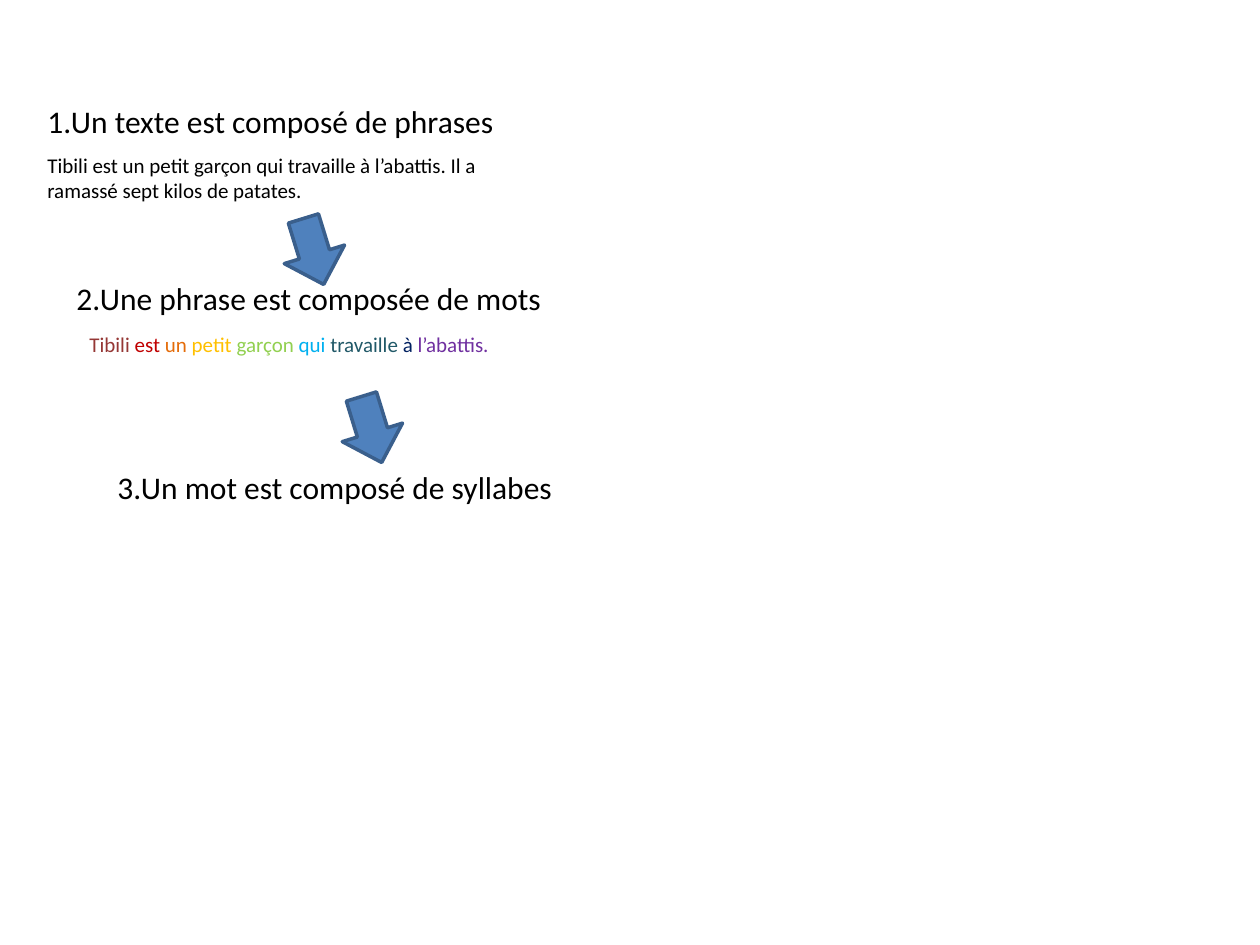
from dataclasses import dataclass

from pptx import Presentation
from pptx.dml.color import RGBColor
from pptx.enum.shapes import MSO_SHAPE as Preset
from pptx.util import Pt

EMU_PER_PX = 914400 / 126
FONT = "Calibri"
COLOURS = {
    "black": "000000",
    "brown": "953735",
    "red": "C00000",
    "orange": "E46C0A",
    "yellow": "FFC000",
    "green": "92D050",
    "sky": "00B0F0",
    "teal": "215968",
    "navy": "002060",
    "purple": "7030A0",
    "arrow": "4F81BD",
    "outline": "3A5F8C",
}


@dataclass(frozen=True)
class Frame:
    left: int
    top: int
    width: int
    height: int

    def emu(self) -> list[int]:
        return [px(n) for n in (self.left, self.top, self.width, self.height)]


@dataclass(frozen=True)
class Span:
    text: str
    colour: str = "black"


@dataclass(frozen=True)
class Label:
    frame: Frame
    spans: tuple[Span, ...]
    size: int


def px(length: int) -> int:
    return round(length * EMU_PER_PX)


def colour(name: str) -> RGBColor:
    return RGBColor.from_string(COLOURS[name])


def add_span(para, text: str, *, size: int, tint: str) -> None:
    run = para.add_run()
    run.text = text
    run.font.name = FONT
    run.font.size = Pt(size)
    run.font.color.rgb = colour(tint)


def draw_label(page, label: Label) -> None:
    box = page.shapes.add_textbox(*label.frame.emu())
    box.text_frame.word_wrap = True
    para = box.text_frame.paragraphs[0]
    for span in label.spans:
        add_span(para, span.text, size=label.size, tint=span.colour)


def draw_arrow(page, frame: Frame) -> None:
    arrow = page.shapes.add_shape(Preset.RIGHT_ARROW, *frame.emu())
    arrow.rotation = 72.9
    arrow.shadow.inherit = False
    arrow.fill.solid()
    arrow.fill.fore_color.rgb = colour("arrow")
    arrow.line.color.rgb = colour("outline")
    arrow.line.width = Pt(2)


COLOURED_WORDS = (
    Span("Tibili ", "brown"),
    Span("est ", "red"),
    Span("un ", "orange"),
    Span("petit ", "yellow"),
    Span("garçon ", "green"),
    Span("qui ", "sky"),
    Span("travaille ", "teal"),
    Span("à ", "navy"),
    Span("l’abattis.", "purple"),
)
EXAMPLE = Span(
    "Tibili est un petit garçon qui travaille à l’abattis. "
    "Il a ramassé sept kilos de patates."
)
LABELS = (
    Label(Frame(35, 96, 476, 50), (Span("1.Un texte est composé de phrases"),), 18),
    Label(Frame(35, 146, 476, 63), (EXAMPLE,), 12),
    Label(Frame(64, 273, 507, 50), (Span("2.Une phrase est composée de mots"),), 18),
    Label(Frame(105, 462, 507, 50), (Span("3.Un mot est composé de syllabes"),), 18),
    Label(Frame(77, 325, 435, 89), COLOURED_WORDS, 12),
)
ARROWS = (Frame(279, 220, 69, 63), Frame(337, 398, 69, 63))


def main() -> None:
    deck = Presentation()
    deck.slide_width, deck.slide_height = px(1260), px(945)
    page = deck.slides.add_slide(deck.slide_layouts[6])
    for label in LABELS:
        draw_label(page, label)
    for frame in ARROWS:
        draw_arrow(page, frame)
    deck.save("out.pptx")


if __name__ == "__main__":
    main()
